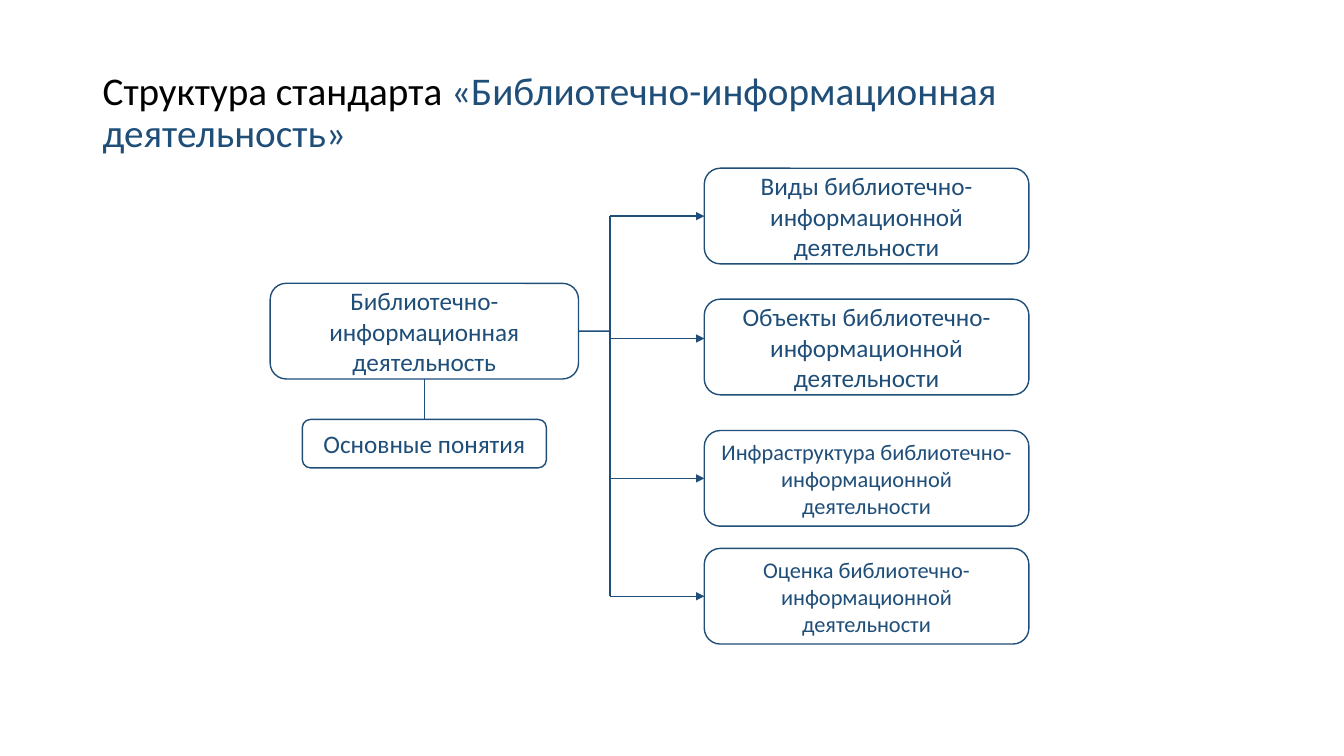
from dataclasses import dataclass
from typing import Optional

from pptx import Presentation
from pptx.dml.color import RGBColor
from pptx.enum.shapes import MSO_CONNECTOR, MSO_SHAPE
from pptx.enum.text import MSO_ANCHOR as ANCHOR, PP_ALIGN as ALIGN
from pptx.oxml.ns import qn
from pptx.shapes.autoshape import Shape
from pptx.shapes.connector import Connector
from pptx.slide import Slide
from pptx.util import Cm, Pt
from lxml.etree import SubElement

BLUE = "1F4E79"
BLACK = "000000"
FONT = "Calibri"
TOP, LEFT, BOTTOM, RIGHT = 0, 1, 2, 3

BOX_H = 2.41
BRANCH_X, BRANCH_W = 17.75, 8.18
TRUNK_X = 15.37


@dataclass
class Box:
    text: str
    x: float
    y: float
    w: float
    h: float = BOX_H
    size: int = 18

    @property
    def mid_y(self) -> float:
        return self.y + self.h / 2


@dataclass
class Branch:
    box: Box
    arrow_y: Optional[float] = None  # None: arrow meets the middle of the side


def branch(text: str, y: float, size: int = 18,
           arrow_y: Optional[float] = None) -> Branch:
    return Branch(Box(text, BRANCH_X, y, BRANCH_W, size=size), arrow_y)


ROOT = Box("Библиотечно-информационная деятельность", 6.81, 7.14, 7.77)
CONCEPTS = Box("Основные понятия", 7.62, 10.57, 6.15, 1.22)
BRANCHES = [
    branch("Виды библиотечно-информационной деятельности", 4.24),
    branch("Объекты библиотечно-информационной деятельности", 7.54, arrow_y=8.53),
    branch("Инфраструктура библиотечно-информационной деятельности", 10.85, 16),
    branch("Оценка библиотечно-информационной деятельности", 13.82, 16),
]


def rgb(color: str) -> RGBColor:
    return RGBColor.from_string(color)


def format_run(r, size: int, color: str) -> None:
    r.font.name = FONT
    r.font.size = Pt(size)
    r.font.color.rgb = rgb(color)


def add_title(s: Slide) -> None:
    tf = s.shapes.add_textbox(Cm(2.34), Cm(1.02), Cm(29.21), Cm(3.68)).text_frame
    tf.word_wrap = True
    tf.vertical_anchor = ANCHOR.MIDDLE
    p = tf.paragraphs[0]
    p.line_spacing = 0.9
    for text, color in (("Структура стандарта ", BLACK),
                        ("«Библиотечно-информационная деятельность»", BLUE)):
        r = p.add_run()
        r.text = text
        format_run(r, 28, color)


def add_box(s: Slide, box: Box) -> Shape:
    sp = s.shapes.add_shape(MSO_SHAPE.ROUNDED_RECTANGLE,
                            Cm(box.x), Cm(box.y), Cm(box.w), Cm(box.h))
    sp.shadow.inherit = False
    sp.fill.background()
    sp.line.color.rgb = rgb(BLUE)
    sp.line.width = Pt(1)
    tf = sp.text_frame
    tf.word_wrap = True
    tf.vertical_anchor = ANCHOR.MIDDLE
    tf.text = box.text
    p = tf.paragraphs[0]
    p.alignment = ALIGN.CENTER
    format_run(p.runs[0], box.size, BLUE)
    return sp


def add_line(s: Slide, x1: float, y1: float, x2: float, y2: float,
             arrow: bool = False) -> Connector:
    line = s.shapes.add_connector(MSO_CONNECTOR.STRAIGHT,
                                  Cm(x1), Cm(y1), Cm(x2), Cm(y2))
    line.line.color.rgb = rgb(BLUE)
    line.line.width = Pt(1)
    if arrow:
        SubElement(line.get_or_add_ln(), qn("a:tailEnd"), type="triangle")
    SubElement(line.element.spPr, qn("a:effectLst"))
    return line


def main() -> None:
    prs = Presentation()
    prs.slide_width, prs.slide_height = Cm(33.87), Cm(19.05)
    s = prs.slides.add_slide(prs.slide_layouts[6])

    add_title(s)
    root = add_box(s, ROOT)
    concepts = add_box(s, CONCEPTS)

    stem = add_line(s, ROOT.x + ROOT.w, ROOT.mid_y, TRUNK_X, ROOT.mid_y)
    stem.begin_connect(root, RIGHT)
    add_line(s, TRUNK_X, BRANCHES[0].box.mid_y, TRUNK_X, BRANCHES[-1].box.mid_y)

    for b in BRANCHES:
        sp = add_box(s, b.box)
        y = b.arrow_y or b.box.mid_y
        arrow = add_line(s, TRUNK_X, y, BRANCH_X, y, arrow=True)
        if b.arrow_y is None:
            arrow.end_connect(sp, LEFT)

    mid_x = ROOT.x + ROOT.w / 2
    link = add_line(s, mid_x, ROOT.y + ROOT.h, mid_x, CONCEPTS.y)
    link.begin_connect(root, BOTTOM)
    link.end_connect(concepts, TOP)

    prs.save("out.pptx")


if __name__ == "__main__":
    main()
